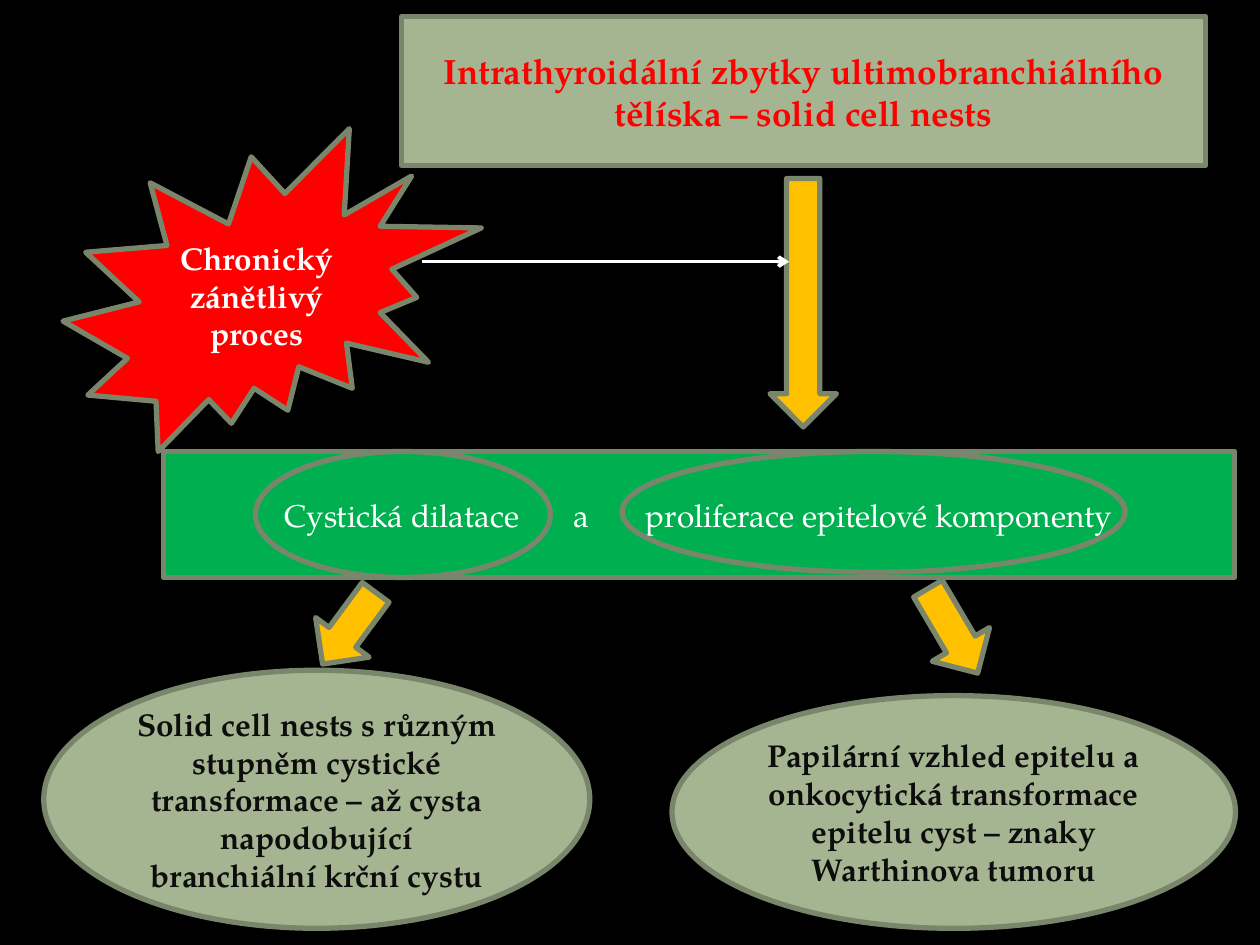
from dataclasses import dataclass
from typing import Any

import pptx
import pptx.dml.color
import pptx.enum.shapes
import pptx.enum.text
import pptx.oxml.ns
import pptx.oxml.xmlchemy
import pptx.presentation
import pptx.slide
import pptx.text.text
import pptx.util
from lxml import etree

Pt = pptx.util.Pt
Kind = pptx.enum.shapes.MSO_SHAPE
Align = pptx.enum.text.PP_ALIGN
qn = pptx.oxml.ns.qn

FONT = "TeX Gyre Pagella"
OUTLINE, SAGE, GREEN = "7A866C", "A5B592", "00B050"
AMBER, RED, WHITE, INK, BLACK = "FFC000", "FF0000", "FFFFFF", "0D0D0D", "000000"


@dataclass(frozen=True)
class Label:
    text: str
    color: str = WHITE
    size: float = 18
    bold: bool = True
    align: Any = Align.CENTER
    left_inset: float = 7.2
    tab_stops: tuple[float, ...] = ()


@dataclass(frozen=True)
class Node:
    kind: Any
    left: float
    top: float
    width: float
    height: float
    fill: str | None = None
    label: Label | None = None
    rotation: float = 0


ORIGIN = Node(Kind.RECTANGLE, 229.5, 9.5, 459.5, 85, SAGE, Label(
    "Intrathyroidální zbytky ultimobranchiálního tělíska – solid cell nests", RED, 20))
MAIN_ARROW = Node(Kind.DOWN_ARROW, 440, 102, 38, 142, AMBER)
CHANGES = Node(Kind.RECTANGLE, 93.5, 258, 612, 72, GREEN, Label(
    "Cystická dilatace\ta\tproliferace epitelové komponenty", bold=False,
    align=Align.LEFT, left_inset=69, tab_stops=(165.5, 206.5)))
INFLAMMATION = Node(Kind.EXPLOSION2, 36, 73.5, 239, 184.5, RED, Label(
    "Chronický zánětlivý proces"))
OUTCOMES = [
    Node(Kind.OVAL, 25, 383, 312, 147.5, SAGE, Label(
        "Solid cell nests s různým stupněm cystické transformace – až cysta "
        "napodobující branchiální krční cystu", INK)),
    Node(Kind.OVAL, 384, 397.5, 322, 133, SAGE, Label(
        "Papilární vzhled epitelu a onkocytická transformace epitelu cyst "
        "– znaky Warthinova tumoru", INK)),
]
HIGHLIGHTS = [
    Node(Kind.OVAL, 146, 258, 168.5, 72),
    Node(Kind.OVAL, 355.5, 258, 287.5, 69),
]
BRANCH_ARROWS = [
    Node(Kind.DOWN_ARROW, 180.5, 333.5, 38, 51, AMBER, rotation=36.5),
    Node(Kind.DOWN_ARROW, 525.5, 332.5, 38, 56, AMBER, rotation=329.5),
]


def rgb(color: str) -> pptx.dml.color.RGBColor:
    return pptx.dml.color.RGBColor.from_string(color)


def set_all(target: Any, values: dict[str, Any]) -> None:
    for name, value in values.items():
        setattr(target, name, value)


def paint(fill: Any, color: str | None) -> None:
    """Fill with one colour, or leave empty when there is none."""
    if color is None:
        fill.background()
    else:
        fill.solid()
        fill.fore_color.rgb = rgb(color)


def write_label(frame: pptx.text.text.TextFrame, label: Label) -> None:
    set_all(frame, {
        "word_wrap": True,
        "vertical_anchor": pptx.enum.text.MSO_ANCHOR.MIDDLE,
        "margin_left": Pt(label.left_inset),
    })
    paragraph = frame.paragraphs[0]
    paragraph.alignment = label.align
    if label.tab_stops:
        tabs = etree.SubElement(paragraph._p.get_or_add_pPr(), qn("a:tabLst"))
        for stop in label.tab_stops:
            etree.SubElement(tabs, qn("a:tab"), pos=str(Pt(stop)), algn="l")
    run = paragraph.add_run()
    run.text = label.text
    set_all(run.font, {"name": FONT, "size": Pt(label.size), "bold": label.bold})
    run.font.color.rgb = rgb(label.color)


def draw_node(slide: pptx.slide.Slide, node: Node) -> None:
    shape = slide.shapes.add_shape(
        node.kind, Pt(node.left), Pt(node.top), Pt(node.width), Pt(node.height))
    shape.shadow.inherit = False
    shape.rotation = node.rotation
    paint(shape.fill, node.fill)
    paint(shape.line.fill, OUTLINE)
    shape.line.width = Pt(3)
    if node.label:
        write_label(shape.text_frame, node.label)


def draw_influence(slide: pptx.slide.Slide, start: float, end: float, y: float) -> None:
    """Draw the thin horizontal arrow from the inflammation to the main arrow."""
    influence = slide.shapes.add_connector(
        pptx.enum.shapes.MSO_CONNECTOR.STRAIGHT, Pt(start), Pt(y), Pt(end), Pt(y))
    paint(influence.line.fill, WHITE)
    influence.line.width = Pt(2)
    etree.SubElement(influence.line._get_or_add_ln(), qn("a:tailEnd"), type="arrow")
    etree.SubElement(influence._element.spPr, qn("a:effectLst"))


def main() -> None:
    deck = pptx.Presentation()
    set_all(deck, {"slide_width": Pt(720), "slide_height": Pt(540)})
    slide = deck.slides.add_slide(deck.slide_layouts[6])
    paint(slide.background.fill, BLACK)

    for node in (ORIGIN, MAIN_ARROW, CHANGES):
        draw_node(slide, node)
    draw_influence(slide, 241, 451, 149.5)
    for node in (INFLAMMATION, *OUTCOMES, *HIGHLIGHTS, *BRANCH_ARROWS):
        draw_node(slide, node)
    deck.save("out.pptx")


if __name__ == "__main__":
    main()
